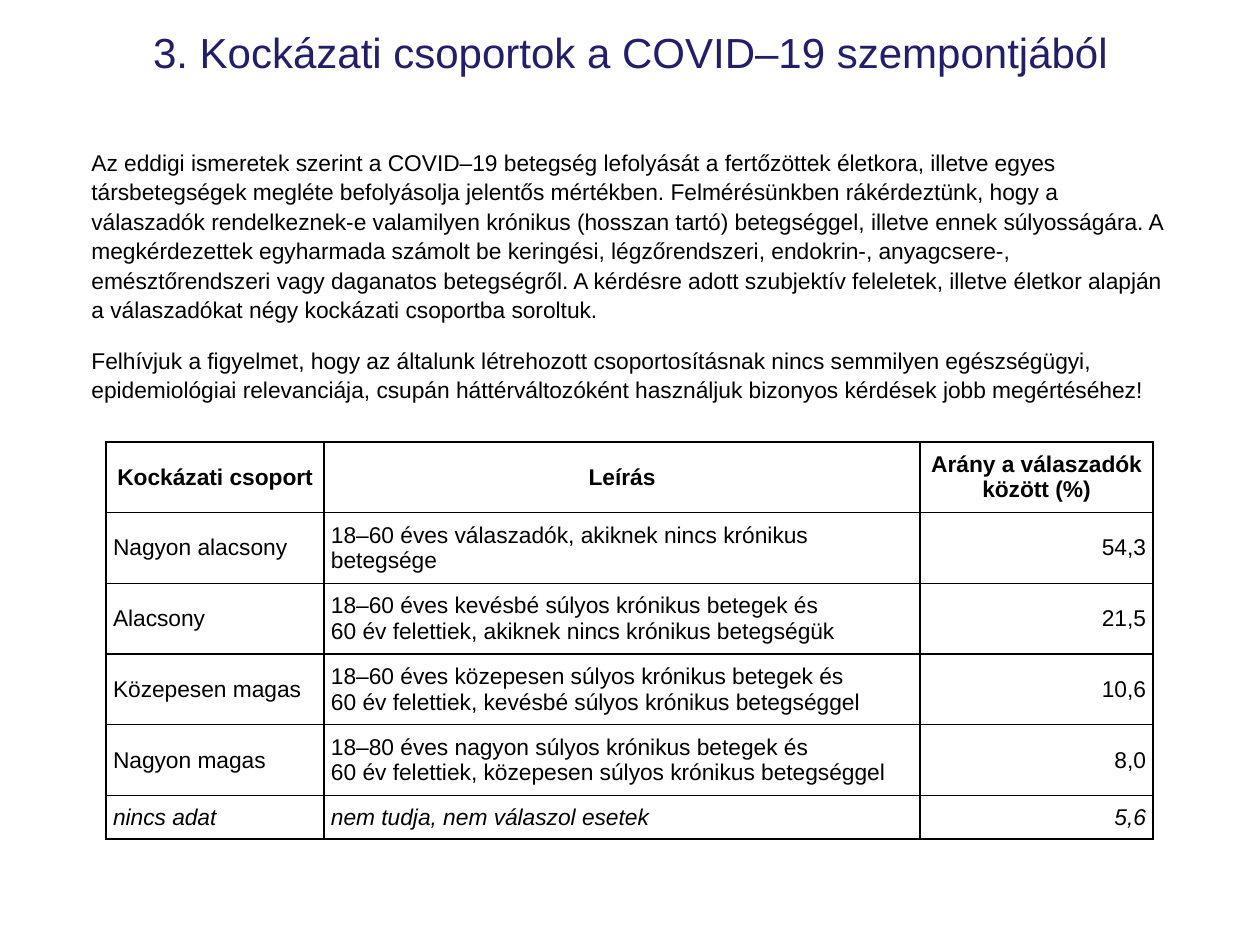
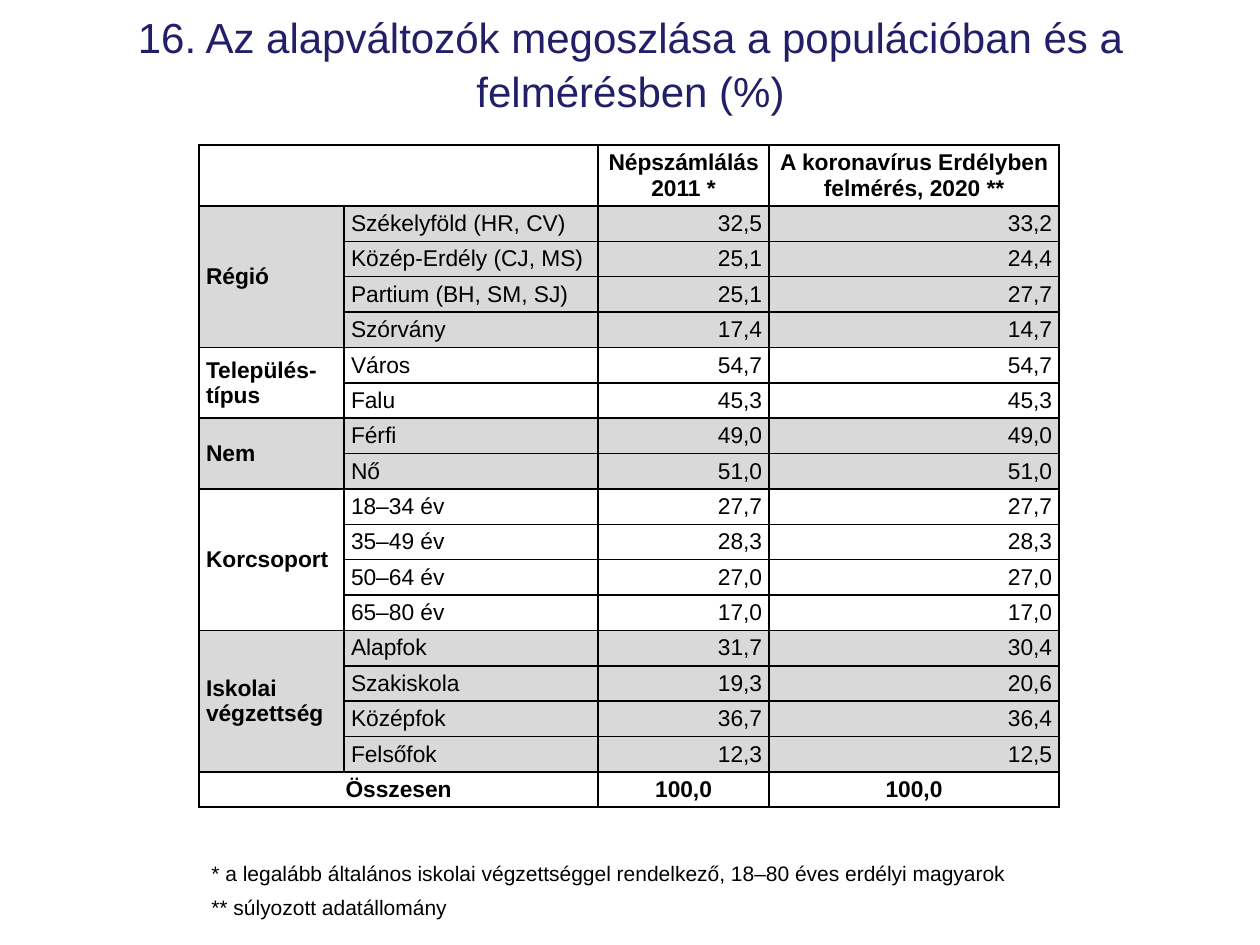
"""Build two survey slides: risk groups and sample composition."""
from dataclasses import dataclass

from lxml.etree import SubElement
from pptx import Presentation
from pptx.dml.color import RGBColor as Color
from pptx.enum.text import MSO_ANCHOR as Anchor, MSO_AUTO_SIZE as AutoSize, PP_ALIGN as Align
from pptx.oxml.ns import qn
from pptx.util import Emu, Pt

PX_PER_INCH = 126


@dataclass(frozen=True)
class Theme:
    """Colours, font and type sizes shared by the slides."""

    font: str = "Arial"
    title_color: str = "221E67"
    text_color: str = "000000"
    border_color: str = "000000"
    band_color: str = "D9D9D9"
    title_size: int = 24
    body_size: int = 13
    note_size: int = 12
    border_width: int = 1
    line_spacing: float = 1.08


@dataclass
class Cell:
    """Text and look of one table cell."""

    text: str = ""
    align: Align = Align.LEFT
    bold: bool = False
    italic: bool = False
    fill: str = ""
    space: int = 0


def px(length):
    """Turn pixels into EMU."""
    return Emu(round(length * 914400 / PX_PER_INCH))


def apply(target, values):
    """Set each named attribute of the target."""
    for name, value in values.items():
        setattr(target, name, value)


class Deck:
    """Holds the theme and the current slide, and draws elements on it."""

    def __init__(self, theme):
        """Start an empty presentation."""
        self.theme = theme
        self.presentation = Presentation()
        apply(self.presentation, {"slide_width": px(1260), "slide_height": px(945)})
        self.slide = None

    def fill_text(self, frame, lines, size, color, align=Align.LEFT, space=0,
                  spacing=None, bold=False, italic=False):
        """Put one paragraph for each line into a text frame."""
        for index, line in enumerate(lines):
            paragraph = frame.paragraphs[0] if index == 0 else frame.add_paragraph()
            apply(paragraph, {"alignment": align, "space_before": Pt(space),
                              "space_after": Pt(space), "line_spacing": spacing})
            run = paragraph.add_run()
            run.text = line
            apply(run.font, {"name": self.theme.font, "size": Pt(size),
                             "bold": bold, "italic": italic})
            run.font.color.rgb = Color.from_string(color)

    def add_slide(self, title, height):
        """Add a title-only slide and format its title."""
        self.slide = self.presentation.slides.add_slide(self.presentation.slide_layouts[5])
        shape = self.slide.shapes.title
        apply(shape, {"left": px(35), "top": px(0), "width": px(1191), "height": px(height)})
        apply(shape.text_frame, {"vertical_anchor": Anchor.MIDDLE, "word_wrap": True,
                                 "auto_size": AutoSize.NONE})
        self.fill_text(shape.text_frame, [title], self.theme.title_size, self.theme.title_color,
                       Align.CENTER, spacing=self.theme.line_spacing)

    def add_text(self, box, lines, size, space):
        """Add a wrapping text box that grows with its text."""
        frame = self.slide.shapes.add_textbox(*map(px, box)).text_frame
        apply(frame, {"word_wrap": True, "auto_size": AutoSize.SHAPE_TO_FIT_TEXT})
        self.fill_text(frame, lines, size, self.theme.text_color, space=space,
                       spacing=self.theme.line_spacing)

    def add_borders(self, cell):
        """Draw a solid line on every side of a cell."""
        properties = cell._tc.get_or_add_tcPr()
        for side in ("a:lnL", "a:lnR", "a:lnT", "a:lnB"):
            line = SubElement(properties, qn(side), w=str(Pt(self.theme.border_width)))
            fill = SubElement(line, qn("a:solidFill"))
            SubElement(fill, qn("a:srgbClr"), val=self.theme.border_color)

    def add_table(self, origin, widths, heights, rows, margins, merges=()):
        """Add a bordered table; merges pairs the corner cells of each merged area."""
        size = sum(widths), sum(heights)
        table = self.slide.shapes.add_table(
            len(rows), len(widths), *map(px, origin + size)).table
        apply(table, {"first_row": False, "horz_banding": False})
        for column, width in zip(table.columns, widths):
            column.width = px(width)
        for row, height in zip(table.rows, heights):
            row.height = px(height)
        for first, last in merges:
            table.cell(*first).merge(table.cell(*last))
        side, edge = map(px, margins)
        for row, contents in zip(table.rows, rows):
            for cell, content in zip(row.cells, contents):
                apply(cell, {"vertical_anchor": Anchor.MIDDLE, "margin_left": side,
                             "margin_right": side, "margin_top": edge, "margin_bottom": edge})
                self.add_borders(cell)
                if content.fill:
                    cell.fill.solid()
                    cell.fill.fore_color.rgb = Color.from_string(content.fill)
                else:
                    cell.fill.background()
                self.fill_text(cell.text_frame, content.text.split("\n"), self.theme.body_size,
                               self.theme.text_color, content.align, content.space,
                               bold=content.bold, italic=content.italic)


INTRODUCTION = [
    "Az eddigi ismeretek szerint a COVID–19 betegség lefolyását a fertőzöttek életkora, illetve "
    "egyes társbetegségek megléte befolyásolja jelentős mértékben. Felmérésünkben rákérdeztünk, "
    "hogy a válaszadók rendelkeznek-e valamilyen krónikus (hosszan tartó) betegséggel, illetve "
    "ennek súlyosságára. A megkérdezettek egyharmada számolt be keringési, légzőrendszeri, "
    "endokrin-, anyagcsere-, emésztőrendszeri vagy daganatos betegségről. A kérdésre adott "
    "szubjektív feleletek, illetve életkor alapján a válaszadókat négy kockázati csoportba "
    "soroltuk.",
    "Felhívjuk a figyelmet, hogy az általunk létrehozott csoportosításnak nincs semmilyen "
    "egészségügyi, epidemiológiai relevanciája, csupán háttérváltozóként használjuk bizonyos "
    "kérdések jobb megértéséhez!",
]
RISK_HEADER = ["Kockázati csoport", "Leírás", "Arány a válaszadók\nközött (%)"]
RISK_GROUPS = [
    ("Nagyon alacsony", "18–60 éves válaszadók, akiknek nincs krónikus betegsége", "54,3"),
    ("Alacsony", "18–60 éves kevésbé súlyos krónikus betegek és\n"
                 "60 év felettiek, akiknek nincs krónikus betegségük", "21,5"),
    ("Közepesen magas", "18–60 éves közepesen súlyos krónikus betegek és\n"
                        "60 év felettiek, kevésbé súlyos krónikus betegséggel", "10,6"),
    ("Nagyon magas", "18–80 éves nagyon súlyos krónikus betegek és\n"
                     "60 év felettiek, közepesen súlyos krónikus betegséggel", "8,0"),
    ("nincs adat", "nem tudja, nem válaszol esetek", "5,6"),
]
SAMPLE_HEADER = ["", "", "Népszámlálás\n2011 *", "A koronavírus Erdélyben\nfelmérés, 2020 **"]
SAMPLE_GROUPS = {
    "Régió": [("Székelyföld (HR, CV)", "32,5", "33,2"), ("Közép-Erdély (CJ, MS)", "25,1", "24,4"),
              ("Partium (BH, SM, SJ)", "25,1", "27,7"), ("Szórvány", "17,4", "14,7")],
    "Település-\ntípus": [("Város", "54,7", "54,7"), ("Falu", "45,3", "45,3")],
    "Nem": [("Férfi", "49,0", "49,0"), ("Nő", "51,0", "51,0")],
    "Korcsoport": [("18–34 év", "27,7", "27,7"), ("35–49 év", "28,3", "28,3"),
                   ("50–64 év", "27,0", "27,0"), ("65–80 év", "17,0", "17,0")],
    "Iskolai\nvégzettség": [("Alapfok", "31,7", "30,4"), ("Szakiskola", "19,3", "20,6"),
                            ("Középfok", "36,7", "36,4"), ("Felsőfok", "12,3", "12,5")],
}
SAMPLE_TOTAL = ["Összesen", "", "100,0", "100,0"]
SAMPLE_NOTES = [
    "* a legalább általános iskolai végzettséggel rendelkező, 18–80 éves erdélyi magyarok",
    "** súlyozott adatállomány",
]


def bold_row(texts, space=0):
    """Make a row of bold centred cells."""
    return [Cell(text, Align.CENTER, bold=True, space=space) for text in texts]


def add_risk_slide(deck):
    """Build the slide of risk groups."""
    deck.add_slide("3. Kockázati csoportok a COVID–19 szempontjából", 99)
    deck.add_text((79, 140, 1101, 255), INTRODUCTION, deck.theme.body_size, 6)
    rows = [bold_row(RISK_HEADER)]
    for group, description, share in RISK_GROUPS:
        italic = group == "nincs adat"
        rows.append([Cell(group, italic=italic), Cell(description, italic=italic),
                     Cell(share, Align.RIGHT, italic=italic)])
    deck.add_table((106, 442), [218, 596, 233], [70, 70, 69, 70, 70, 42], rows, (7, 8))


def add_sample_slide(deck):
    """Build the slide that compares census and survey."""
    deck.add_slide("16. Az alapváltozók megoszlása a populációban és a felmérésben (%)", 123)
    rows, merges = [bold_row(SAMPLE_HEADER)], [((0, 0), (0, 1))]
    for number, (variable, categories) in enumerate(SAMPLE_GROUPS.items()):
        fill = "" if number % 2 else deck.theme.band_color
        start = len(rows)
        merges.append(((start, 0), (start + len(categories) - 1, 0)))
        for index, (category, *shares) in enumerate(categories):
            rows.append([Cell("" if index else variable, bold=True, fill=fill),
                         Cell(category, fill=fill, space=3),
                         *(Cell(share, Align.RIGHT, fill=fill, space=3) for share in shares)])
    merges.append(((len(rows), 0), (len(rows), 1)))
    rows.append(bold_row(SAMPLE_TOTAL, 3))
    heights = [61] + [35] * (len(rows) - 1)
    deck.add_table((199, 145), [145, 254, 171, 290], heights, rows, (7, 5), merges)
    deck.add_text((199, 852, 843, 73), SAMPLE_NOTES, deck.theme.note_size, 2)


def main():
    """Build and save the presentation."""
    deck = Deck(Theme())
    add_risk_slide(deck)
    add_sample_slide(deck)
    deck.presentation.save("out.pptx")


if __name__ == "__main__":
    main()
